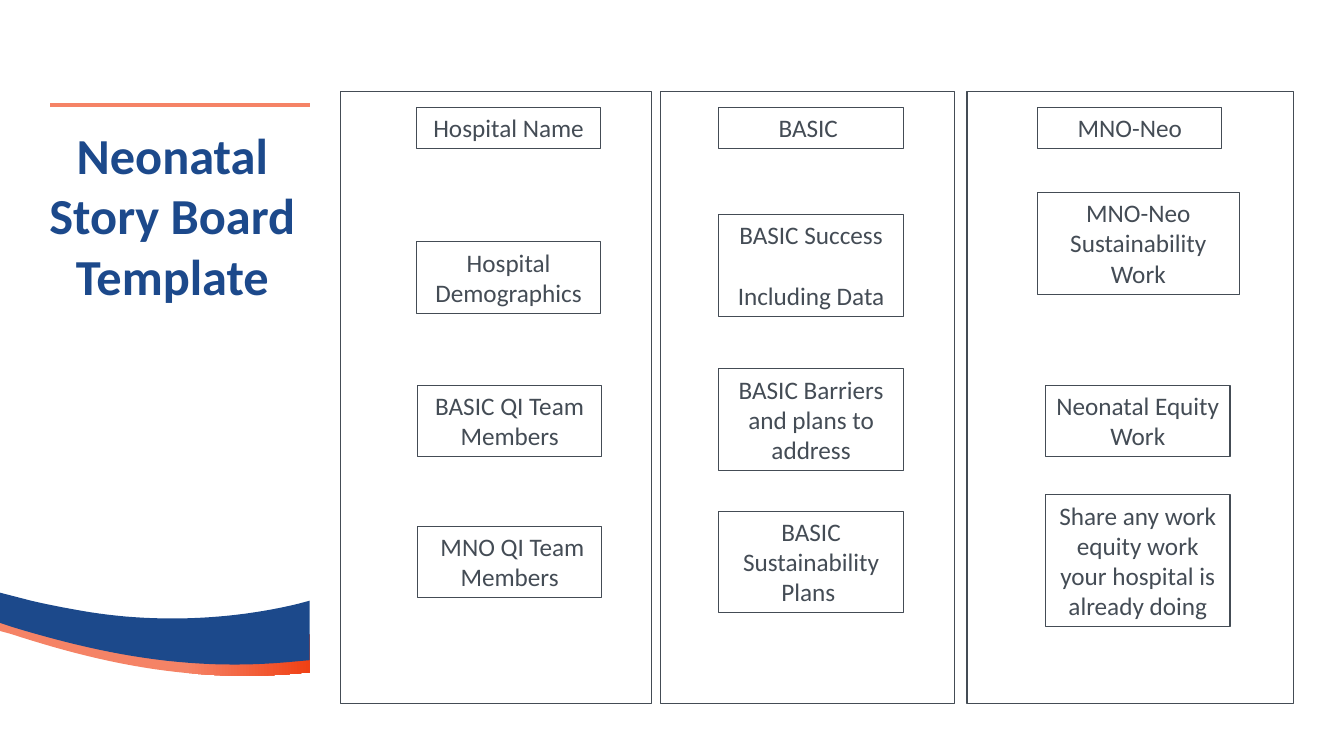
from dataclasses import dataclass

from lxml.etree import SubElement
from pptx import Presentation
from pptx.dml.color import RGBColor
from pptx.enum.shapes import MSO_CONNECTOR, MSO_SHAPE
from pptx.enum.text import MSO_ANCHOR, PP_ALIGN
from pptx.oxml.ns import qn
from pptx.shapes.autoshape import Shape
from pptx.slide import Slide
from pptx.text.text import TextFrame
from pptx.util import Inches, Pt

WHITE = RGBColor(0xFF, 0xFF, 0xFF)
SLATE = RGBColor(0x44, 0x4C, 0x55)
NAVY = RGBColor(0x1C, 0x49, 0x8B)
CORAL = RGBColor(0xF5, 0x83, 0x66)
ORANGE = RGBColor(0xF0, 0x41, 0x15)

LABEL_FONT = {"name": "Calibri", "size": Pt(18)}
TITLE_FONT = {"name": "Calibri", "size": Pt(36), "bold": True}
LABEL_FRAME = {"word_wrap": True, "vertical_anchor": MSO_ANCHOR.TOP}

PANEL_TOP, PANEL_HEIGHT = 0.91, 6.07
LABEL_WIDTH = 1.83
CURVE_STEPS = 24

Point = tuple[float, float]


@dataclass
class Label:
    left: float
    top: float
    height: float
    paragraphs: list[str]
    width: float = LABEL_WIDTH


@dataclass
class Panel:
    left: float
    width: float
    labels: list[Label]


@dataclass
class Wave:
    start: Point
    top: list[list[Point]]  # one point is a line, three are a Bézier curve
    bottom: list[list[Point]]


PANELS = [
    Panel(3.38, 3.08, [
        Label(4.13, 1.07, 0.4, ["Hospital Name"]),
        Label(4.13, 2.4, 0.71, ["Hospital Demographics"]),
        Label(4.14, 3.82, 0.71, ["BASIC QI Team Members"]),
        Label(4.14, 5.22, 0.71, [" MNO QI Team Members"]),
    ]),
    Panel(6.55, 2.92, [
        Label(7.13, 1.07, 0.4, ["BASIC "]),
        Label(7.13, 2.13, 1.01, ["BASIC Success", "Including Data"]),
        Label(7.13, 3.66, 1.01, ["BASIC Barriers and plans to address"]),
        Label(7.13, 5.07, 1.01, ["BASIC Sustainability Plans "]),
    ]),
    Panel(9.59, 3.24, [
        Label(10.29, 1.07, 0.4, ["MNO-Neo"]),
        Label(10.29, 1.91, 1.01, ["MNO-Neo Sustainability Work"], 2.0),
        Label(10.37, 3.82, 0.71, ["Neonatal Equity Work"]),
        Label(10.37, 4.91, 1.31,
              ["Share any work equity work your hospital is already doing"]),
    ]),
]

CORAL_WAVE = Wave(
    (0, 6.05),
    [[(0.47, 6.19)], [(1.3, 6.41), (2.2, 6.48), (3.05, 6.31)], [(3.07, 6.3)]],
    [[(3.07, 6.67)], [(2.84, 6.69)],
     [(1.83, 6.76), (0.97, 6.57), (0.11, 6.29)], [(0, 6.26)]],
)
NAVY_WAVE = Wave(
    (0, 5.88),
    [[(0.31, 5.96)], [(0.48, 6), (0.64, 6.03), (0.81, 6.06)],
     [(1.49, 6.18), (2.26, 6.16), (2.96, 5.99)], [(3.07, 5.96)]],
    [[(3.07, 6.55)], [(2.85, 6.57)],
     [(1.84, 6.66), (0.98, 6.48), (0.12, 6.22)], [(0, 6.18)]],
)


def set_all(target: object, values: dict) -> None:
    for name, value in values.items():
        setattr(target, name, value)


def write(tf: TextFrame, paragraphs: list[str], font: dict, color: RGBColor) -> None:
    set_all(tf, LABEL_FRAME)
    for i, text in enumerate(paragraphs):
        p = tf.paragraphs[0] if i == 0 else tf.add_paragraph()
        p.alignment = PP_ALIGN.CENTER
        if i > 0:
            p.space_before = Pt(22)
        r = p.add_run()
        r.text = text
        set_all(r.font, font)
        r.font.color.rgb = color


def add_box(s: Slide, left: float, top: float, width: float, height: float,
            line_width: float) -> Shape:
    sp = s.shapes.add_shape(MSO_SHAPE.RECTANGLE, Inches(left), Inches(top),
                            Inches(width), Inches(height))
    sp.shadow.inherit = False
    sp.fill.background()
    sp.line.color.rgb = SLATE
    sp.line.width = Pt(line_width)
    return sp


def add_panel(s: Slide, panel: Panel) -> None:
    sp = add_box(s, panel.left, PANEL_TOP, panel.width, PANEL_HEIGHT, 1)
    sp.fill.solid()
    sp.fill.fore_color.rgb = WHITE
    for label in panel.labels:
        box = add_box(s, label.left, label.top, label.width, label.height, 0.75)
        write(box.text_frame, label.paragraphs, LABEL_FONT, SLATE)


def bezier(a: Point, b: Point, c: Point, d: Point) -> list[Point]:
    points = []
    for i in range(1, CURVE_STEPS + 1):
        t = i / CURVE_STEPS
        u = 1 - t
        weights = (u**3, 3 * u * u * t, 3 * u * t * t, t**3)
        x, y = (sum(w * v for w, v in zip(weights, axis)) for axis in zip(a, b, c, d))
        points.append((x, y))
    return points


def add_wave(s: Slide, wave: Wave) -> Shape:
    points = [wave.start]
    for segment in wave.top + wave.bottom:
        points += bezier(points[-1], *segment) if len(segment) == 3 else segment
    corners = [(Inches(x), Inches(y)) for x, y in points]
    builder = s.shapes.build_freeform(*corners[0])
    builder.add_line_segments(corners[1:], close=True)
    sp = builder.convert_to_shape()
    sp.shadow.inherit = False
    sp.line.fill.background()
    return sp


def main() -> None:
    prs = Presentation()
    prs.slide_width, prs.slide_height = Inches(13.33), Inches(7.5)
    s = prs.slides.add_slide(prs.slide_layouts[6])

    # Rule above the title
    rule = s.shapes.add_connector(MSO_CONNECTOR.STRAIGHT, Inches(0.5), Inches(1.04),
                                  Inches(3.07), Inches(1.04))
    rule.line.color.rgb = CORAL
    rule.line.width = Pt(2.5)
    SubElement(rule._element.spPr, qn("a:effectLst"))

    # Waves at the lower left
    fill = add_wave(s, CORAL_WAVE).fill
    fill.gradient()
    fill.gradient_angle = 0
    for stop, position, color in zip(fill.gradient_stops, (0.6, 1), (CORAL, ORANGE)):
        stop.position = position
        stop.color.rgb = color
    fill = add_wave(s, NAVY_WAVE).fill
    fill.solid()
    fill.fore_color.rgb = NAVY

    # Story board panels
    for panel in PANELS:
        add_panel(s, panel)

    # Title
    title = s.shapes.add_textbox(Inches(0.21), Inches(1.18), Inches(3), Inches(1.45))
    write(title.text_frame, ["Neonatal Story Board Template"], TITLE_FONT, NAVY)

    prs.save("out.pptx")


if __name__ == "__main__":
    main()
